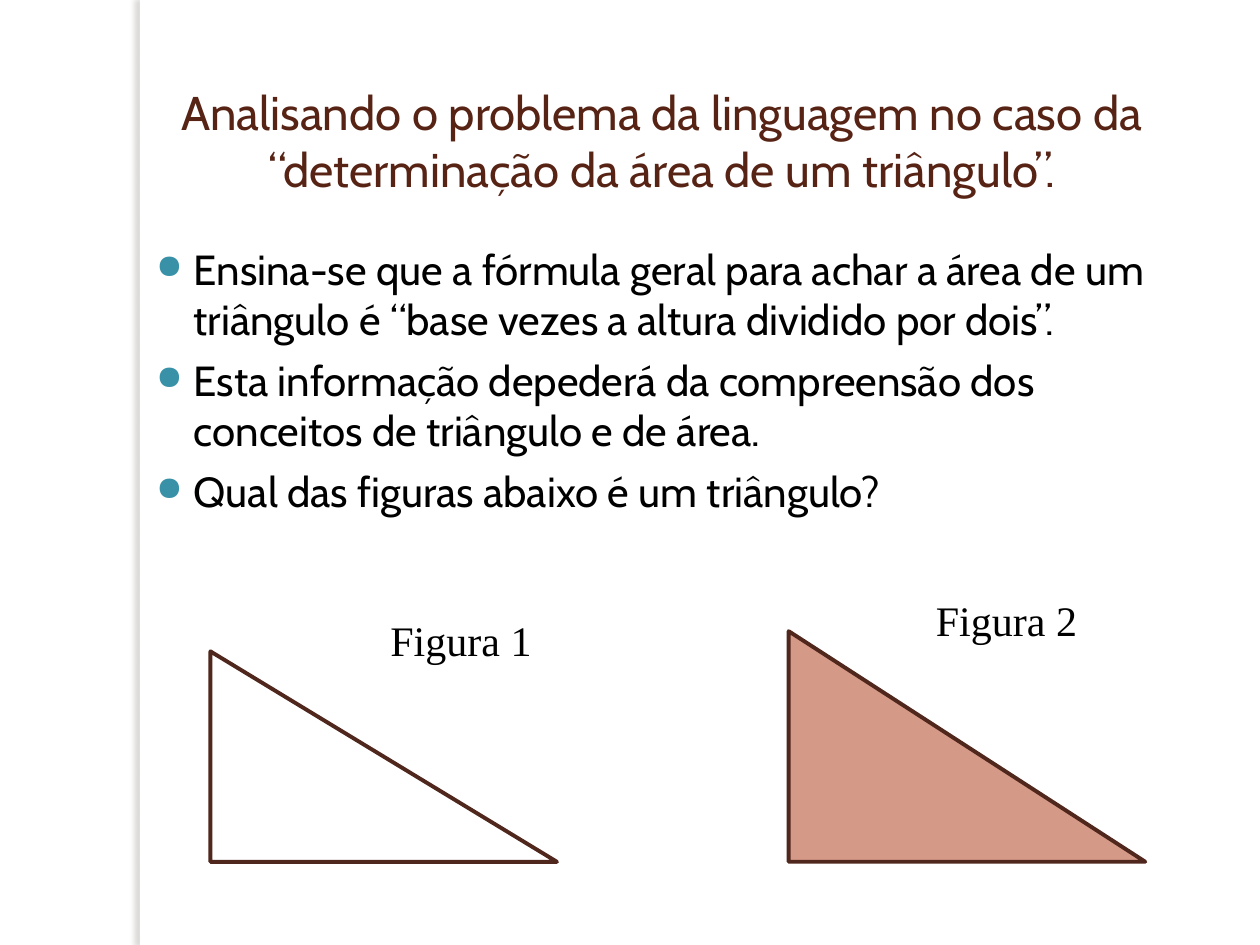
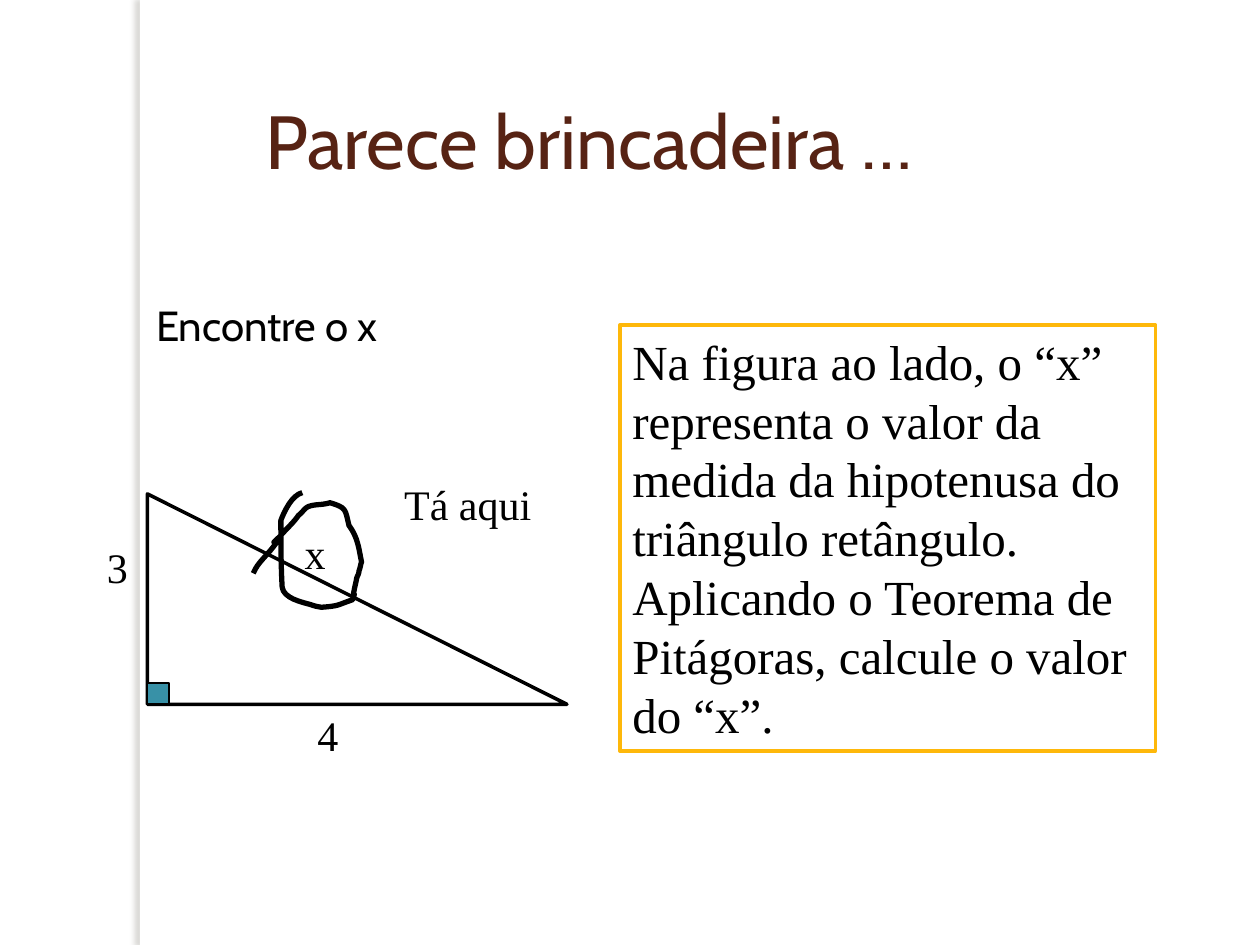
from dataclasses import dataclass
from typing import Optional

import pptx
import pptx.dml.color
import pptx.enum.shapes
import pptx.enum.text
import pptx.oxml
import pptx.oxml.ns
import pptx.util
from pptx.util import Inches

HEADING_FONT = "Cabin"
LABEL_FONT = "Times New Roman"
BLACK = "000000"
WHITE = "FFFFFF"
TITLE_BROWN = "572314"
OUTLINE_BROWN = "4F271C"
SALMON = "D59988"
TEAL = "3891A7"
YELLOW = "FEB80A"
BAND_SHADOW = "736F63"
LABEL_HEIGHT = 0.5
CURVE_STEPS = 8
TITLE_ONLY_LAYOUT = 5
RECTANGLE = pptx.enum.shapes.MSO_SHAPE.RECTANGLE
RIGHT_TRIANGLE = pptx.enum.shapes.MSO_SHAPE.RIGHT_TRIANGLE
LEFT = pptx.enum.text.PP_ALIGN.LEFT
CENTER = pptx.enum.text.PP_ALIGN.CENTER
TOP = pptx.enum.text.MSO_ANCHOR.TOP
MIDDLE = pptx.enum.text.MSO_ANCHOR.MIDDLE


@dataclass(frozen=True)
class Box:
    left: float
    top: float
    width: float
    height: float

    def lengths(self):
        return [Inches(side) for side in (self.left, self.top, self.width, self.height)]


@dataclass(frozen=True)
class Figure:
    kind: int
    box: Box
    line: Optional[str] = None
    weight: float = 2
    fill: Optional[str] = None


@dataclass(frozen=True)
class Label:
    text: str
    left: float
    top: float
    width: float
    font: str = LABEL_FONT


BULLETS = [
    "Ensina-se que a fórmula geral para achar a área de um triângulo é “base vezes a altura dividido por dois”.",
    "Esta informação depederá da compreensão dos conceitos de triângulo e de área.",
    "Qual das figuras abaixo é um triângulo?",
]
COMPARED_TRIANGLES = [
    Figure(RIGHT_TRIANGLE, Box(1.67, 5.17, 2.75, 1.67), OUTLINE_BROWN, 2.25),
    Figure(RIGHT_TRIANGLE, Box(6.26, 5.01, 2.83, 1.83), OUTLINE_BROWN, 2.25, SALMON),
]
COMPARED_LABELS = [
    Label("Figura 1", 3, 4.83, 1.42),
    Label("Figura 2", 7.33, 4.67, 1.5),
]
MEASURED_TRIANGLE = Figure(RIGHT_TRIANGLE, Box(1.17, 3.92, 3.33, 1.67), BLACK, 2, WHITE)
RIGHT_ANGLE_MARK = Figure(RECTANGLE, Box(1.17, 5.42, 0.17, 0.17), BLACK, 1, TEAL)
EXERCISE_FRAME = Figure(RECTANGLE, Box(4.92, 2.58, 4.25, 3.38), YELLOW, 2, WHITE)
EXERCISE_TEXT = (
    "Na figura ao lado, o “x” representa o valor da medida da hipotenusa do triângulo "
    "retângulo. Aplicando o Teorema de Pitágoras, calcule o valor do “x”."
)
MEASURED_LABELS = [
    Label("x", 2.32, 4.14, 0.5),
    Label("3", 0.75, 4.25, 0.25),
    Label("4", 2.42, 5.58, 0.5),
    Label("Tá aqui", 3.11, 3.75, 1.5),
    Label("Encontre o x", 1.14, 2.33, 2.6, HEADING_FONT),
]
SCRIBBLE_START = (2.4, 3.91)
SCRIBBLE_CURVES = [
    ((2.32, 3.93), (2.26, 4.05), (2.23, 4.13)),
    ((2.23, 4.31), (2.23, 4.48), (2.24, 4.66)),
    ((2.25, 4.75), (2.4, 4.78), (2.47, 4.8)),
    ((2.49, 4.81), (2.55, 4.82), (2.55, 4.82)),
    ((2.7, 4.81), (2.68, 4.8), (2.8, 4.76)),
    ((2.84, 4.63), (2.77, 4.86), (2.83, 4.6)),
    ((2.83, 4.58), (2.85, 4.56), (2.85, 4.53)),
    ((2.86, 4.51), (2.86, 4.49), (2.87, 4.46)),
    ((2.85, 4.36), (2.84, 4.26), (2.77, 4.17)),
    ((2.74, 4.04), (2.75, 4.03), (2.62, 3.99)),
    ((2.56, 4.01), (2.5, 4), (2.45, 4.02)),
    ((2.42, 4.03), (2.4, 4.07), (2.37, 4.09)),
    ((2.33, 4.15), (2.27, 4.2), (2.22, 4.26)),
    ((2.1, 4.37), (2.26, 4.23), (2.17, 4.34)),
    ((2.11, 4.42), (2.05, 4.46), (2.01, 4.55)),
]


def color(value: str) -> pptx.dml.color.RGBColor:
    return pptx.dml.color.RGBColor.from_string(value)


def write_text(shape, *texts: str, font: str = LABEL_FONT, size: float = 24,
               text_color: str = BLACK, align=LEFT, anchor=TOP) -> None:
    frame = shape.text_frame
    frame.word_wrap = True
    frame.auto_size = pptx.enum.text.MSO_AUTO_SIZE.NONE
    frame.vertical_anchor = anchor
    for index, text in enumerate(texts):
        paragraph = frame.add_paragraph() if index else frame.paragraphs[0]
        paragraph.alignment = align
        run = paragraph.add_run()
        run.text = text
        run.font.name = font
        run.font.size = pptx.util.Pt(size)
        run.font.color.rgb = color(text_color)


def style_outline(shape, line: Optional[str], weight: float, fill: Optional[str]) -> None:
    shape.shadow.inherit = False
    if fill:
        shape.fill.solid()
        shape.fill.fore_color.rgb = color(fill)
    else:
        shape.fill.background()
    if line:
        shape.line.color.rgb = color(line)
        shape.line.width = pptx.util.Pt(weight)
    else:
        shape.line.fill.background()


def draw_figure(slide, figure: Figure):
    shape = slide.shapes.add_shape(figure.kind, *figure.box.lengths())
    style_outline(shape, figure.line, figure.weight, figure.fill)
    return shape


def draw_label(slide, label: Label) -> None:
    box = Box(label.left, label.top, label.width, LABEL_HEIGHT)
    write_text(slide.shapes.add_textbox(*box.lengths()), label.text, font=label.font)


def draw_side_band(slide) -> None:
    band = draw_figure(slide, Figure(RECTANGLE, Box(1.11, 0, 0.08, 7.5), fill=WHITE))
    effects = band.element.spPr.find(pptx.oxml.ns.qn("a:effectLst"))
    effects.append(pptx.oxml.parse_xml(
        f'<a:outerShdw {pptx.oxml.ns.nsdecls("a")} blurRad="{pptx.util.Pt(3)}" '
        f'dist="{pptx.util.Pt(3)}" dir="10800000" algn="tl" rotWithShape="0">'
        f'<a:srgbClr val="{BAND_SHADOW}"><a:alpha val="25000"/></a:srgbClr></a:outerShdw>'))


def add_titled_slide(presentation, title: str, box: Box, size: float, align):
    slide = presentation.slides.add_slide(presentation.slide_layouts[TITLE_ONLY_LAYOUT])
    slide.background.fill.solid()
    slide.background.fill.fore_color.rgb = color(WHITE)
    draw_side_band(slide)
    placeholder = slide.shapes.title
    placeholder.left, placeholder.top, placeholder.width, placeholder.height = box.lengths()
    write_text(placeholder, title, font=HEADING_FONT, size=size,
               text_color=TITLE_BROWN, align=align, anchor=MIDDLE)
    return slide


def draw_bullets(slide, box: Box, texts: list[str]) -> None:
    shape = slide.shapes.add_textbox(*box.lengths())
    write_text(shape, *texts, font=HEADING_FONT)
    namespace = pptx.oxml.ns.nsdecls("a")
    for paragraph in shape.text_frame.paragraphs:
        paragraph.space_before = pptx.util.Pt(6)
        properties = paragraph._p.get_or_add_pPr()
        properties.set("marL", str(Inches(0.3)))
        properties.set("indent", str(Inches(-0.3)))
        for bullet_part in (
            f'<a:buClr {namespace}><a:srgbClr val="{TEAL}"/></a:buClr>',
            f'<a:buSzPct {namespace} val="80000"/>',
            f'<a:buChar {namespace} char="●"/>',
        ):
            properties.append(pptx.oxml.parse_xml(bullet_part))


def curve_points(start, curves):
    for first, second, end in curves:
        for step in range(1, CURVE_STEPS + 1):
            t = step / CURVE_STEPS
            u = 1 - t
            yield tuple(
                Inches(u**3 * a + 3 * u**2 * t * b + 3 * u * t**2 * c + t**3 * d)
                for a, b, c, d in zip(start, first, second, end))
        start = end


def draw_scribble(slide) -> None:
    builder = slide.shapes.build_freeform(*(Inches(value) for value in SCRIBBLE_START))
    builder.add_line_segments(list(curve_points(SCRIBBLE_START, SCRIBBLE_CURVES)), close=False)
    style_outline(builder.convert_to_shape(), BLACK, 3, None)


def build_triangle_slide(presentation) -> None:
    slide = add_titled_slide(
        presentation,
        "Analisando o problema da linguagem no caso da “determinação da área de um triângulo”.",
        Box(0.75, 0.36, 9, 1.5), 27, CENTER)
    draw_bullets(slide, Box(1.14, 1.88, 8.43, 4.94), BULLETS)
    for triangle in COMPARED_TRIANGLES:
        draw_figure(slide, triangle)
    for label in COMPARED_LABELS:
        draw_label(slide, label)


def build_joke_slide(presentation) -> None:
    slide = add_titled_slide(
        presentation, "Parece brincadeira …", Box(2.01, 0.36, 6.5, 1.5), 43, LEFT)
    draw_figure(slide, MEASURED_TRIANGLE)
    draw_figure(slide, RIGHT_ANGLE_MARK)
    write_text(draw_figure(slide, EXERCISE_FRAME), EXERCISE_TEXT, size=28)
    for label in MEASURED_LABELS:
        draw_label(slide, label)
    draw_scribble(slide)


def main() -> None:
    presentation = pptx.Presentation()
    presentation.slide_width = Inches(10)
    presentation.slide_height = Inches(7.5)
    build_triangle_slide(presentation)
    build_joke_slide(presentation)
    presentation.save("out.pptx")


if __name__ == "__main__":
    main()
